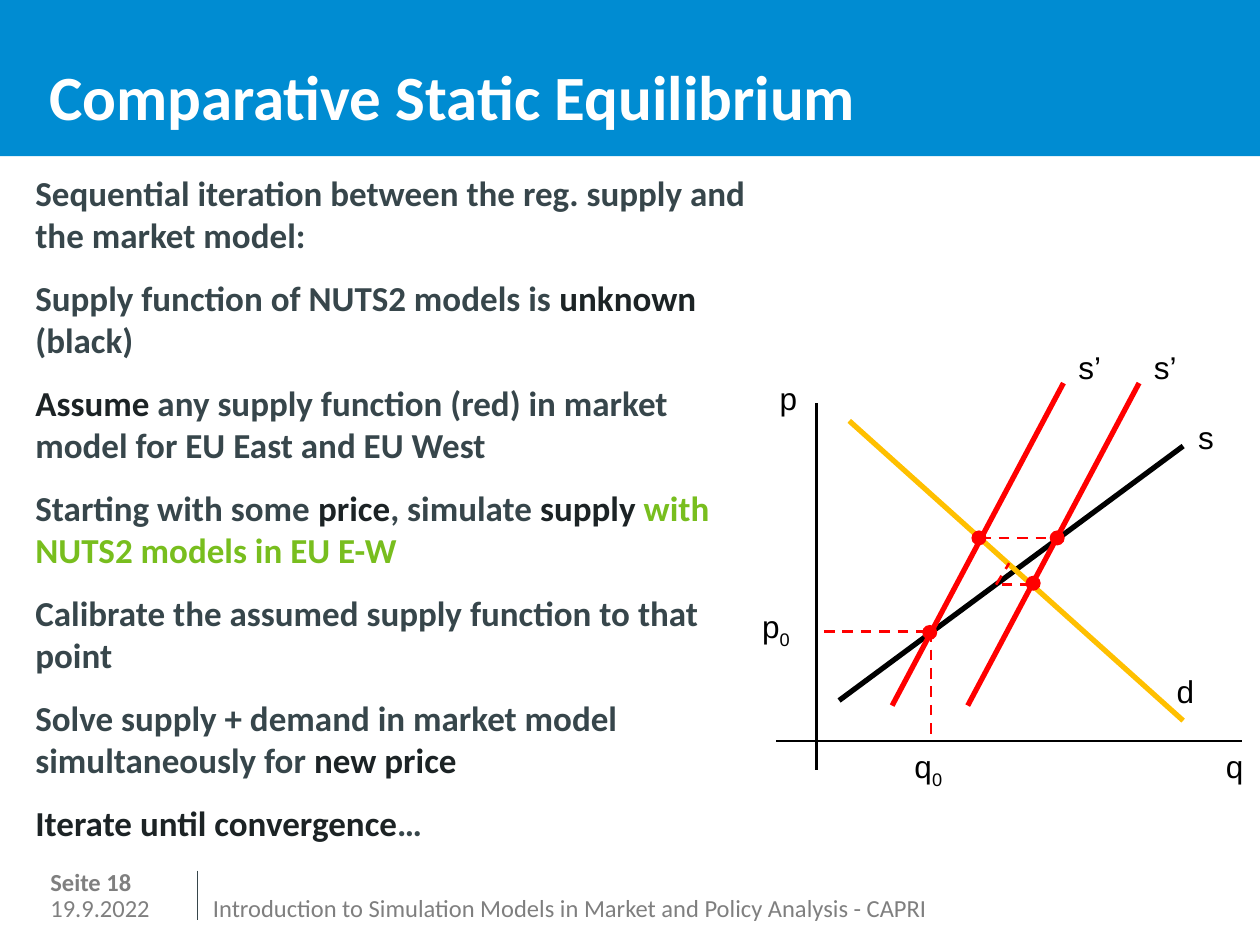
import itertools
from typing import NamedTuple

import pptx
import pptx.dml.color
import pptx.enum.dml
import pptx.enum.shapes
import pptx.enum.text
import pptx.oxml.ns
import pptx.util
from lxml import etree

Pt = pptx.util.Pt
COLORS = {
    "band": "008CD2", "white": "FFFFFF", "slate": "37464B", "dark": "1C2325",
    "green": "78BE1E", "gray": "7F7F7F", "black": "000000", "red": "FF0000",
    "yellow": "FFC000",
}


class Line(NamedTuple):
    start: tuple[float, float]
    end: tuple[float, float]
    color: str
    width: float
    dashed: bool = False


class Label(NamedTuple):
    text: str
    left: float
    top: float
    width: float
    subscript: str = ""


def rgb(name: str) -> pptx.dml.color.RGBColor:
    return pptx.dml.color.RGBColor.from_string(COLORS[name])


def style(font, face: str, size: float, color: str, bold: bool = False) -> None:
    font.name, font.size, font.bold = face, Pt(size), bold
    font.color.rgb = rgb(color)


def place(shape, left: float, top: float, width: float, height: float) -> None:
    shape.left, shape.top = Pt(left), Pt(top)
    shape.width, shape.height = Pt(width), Pt(height)


def clear_margins(frame) -> None:
    frame.margin_left = frame.margin_top = 0
    frame.margin_right = frame.margin_bottom = 0
    frame.word_wrap = True
    frame.auto_size = pptx.enum.text.MSO_AUTO_SIZE.NONE


def draw_line(page, line: Line) -> None:
    connector = page.shapes.add_connector(
        pptx.enum.shapes.MSO_CONNECTOR.STRAIGHT,
        *(Pt(value) for value in line.start + line.end))
    connector.line.color.rgb = rgb(line.color)
    connector.line.width = Pt(line.width)
    if line.dashed:
        connector.line.dash_style = pptx.enum.dml.MSO_LINE.DASH
    etree.SubElement(connector.element.spPr, pptx.oxml.ns.qn("a:effectLst"))


def draw_shape(page, kind, left: float, top: float, width: float,
               height: float, color: str):
    shape = page.shapes.add_shape(kind, Pt(left), Pt(top), Pt(width), Pt(height))
    shape.shadow.inherit = False
    shape.fill.solid()
    shape.fill.fore_color.rgb = rgb(color)
    shape.line.fill.background()
    return shape


def draw_label(page, label: Label) -> None:
    box = page.shapes.add_textbox(
        Pt(label.left), Pt(label.top), Pt(label.width), Pt(29.5))
    box.text_frame.word_wrap = False
    box.text_frame.auto_size = pptx.enum.text.MSO_AUTO_SIZE.SHAPE_TO_FIT_TEXT
    box.text_frame.text = label.text
    para = box.text_frame.paragraphs[0]
    if label.subscript:
        span = para.add_run()
        span.text = label.subscript
        span.font._element.set("baseline", "-25000")
    for span in para.runs:
        style(span.font, "Arial", 18, "black")


def draw_footer(page, text: str, left: float, top: float, width: float,
                bold: bool = False) -> None:
    box = page.shapes.add_textbox(Pt(left), Pt(top), Pt(width), Pt(20))
    clear_margins(box.text_frame)
    box.text_frame.text = text
    style(box.text_frame.paragraphs[0].runs[0].font, "Calibri", 14, "gray", bold)


def fill_body(body, paragraphs) -> None:
    clear_margins(body.text_frame)
    for number, spans in enumerate(paragraphs):
        para = (body.text_frame.add_paragraph() if number
                else body.text_frame.paragraphs[0])
        properties = para._p.get_or_add_pPr()
        properties.set("marL", "0")
        properties.set("indent", "0")
        etree.SubElement(properties, pptx.oxml.ns.qn("a:buNone"))
        para.space_before, para.space_after = Pt(0), Pt(12)
        for text, color in spans:
            span = para.add_run()
            span.text = text
            style(span.font, "Calibri", 20, color, True)


BODY = [
    [("Sequential iteration between the reg. supply and the market model:", "slate")],
    [("Supply function of NUTS2 models is ", "slate"), ("unknown", "dark"),
     (" (black)", "slate")],
    [("Assume", "dark"),
     (" any supply function (red) in market model for EU East and EU West", "slate")],
    [("Starting with some ", "slate"), ("price", "dark"), (", simulate ", "slate"),
     ("supply ", "dark"), ("with NUTS2 models in EU E-W", "green")],
    [("Calibrate the assumed supply function to that point", "slate")],
    [("Solve supply + demand in market model simultaneously for ", "slate"),
     ("new price", "dark")],
    [("Iterate until convergence", "dark"), ("…", "slate")],
]
AXES_AND_CURVES = [
    Line((470.9, 360.7), (534.2, 360.7), "red", 1.5, True),
    Line((466.6, 230.4), (466.6, 439.9), "black", 1.5),
    Line((443.5, 423.4), (709.9, 423.4), "black", 1.5),
    Line((479.5, 400.3), (676.1, 254.9), "black", 3),
    Line((485.3, 240.5), (676.1, 411.8), "yellow", 3),
    *(Line((left, 403.2), (left + 97.9, 218.9), "red", 3) for left in (553, 509.8)),
]
ITERATION = [(532.8, 360.7), (560.2, 307.4), (604.1, 307.4), (589, 334.1),
             (569.2, 334.1), (576.7, 321.8)]
LABELS = [
    Label("p", 428.4, 343.4, 31, "0"), Label("q", 515.5, 423.4, 31, "0"),
    Label("q", 693.4, 423.4, 24.5), Label("p", 438.5, 213.1, 24.5),
    Label("s", 677.5, 235.4, 23), Label("d", 665.3, 380.2, 24.5),
    Label("s’", 652.3, 195.1, 27.4), Label("s’", 609.1, 195.1, 27.4),
]
DOTS = [(555.1, 303.1), (527, 357.1), (599.8, 303.1), (586.1, 329)]


def main() -> None:
    deck = pptx.Presentation()
    deck.slide_width, deck.slide_height = Pt(720), Pt(540)
    page = deck.slides.add_slide(deck.slide_layouts[1])
    title, body = page.placeholders

    # Title on its band, with the band behind the placeholders
    band = draw_shape(page, pptx.enum.shapes.MSO_SHAPE.RECTANGLE,
                      0, -1.4, 720, 90.7, "band")
    title.element.addprevious(band.element)
    place(title, 28.1, 0, 663.1, 76.3)
    clear_margins(title.text_frame)
    title.text_frame.vertical_anchor = pptx.enum.text.MSO_ANCHOR.BOTTOM
    title.text_frame.text = "Comparative Static Equilibrium"
    para = title.text_frame.paragraphs[0]
    para.alignment = pptx.enum.text.PP_ALIGN.LEFT
    para.line_spacing = Pt(35)
    style(para.runs[0].font, "Calibri", 36, "white", True)

    # Steps of the iteration
    place(body, 20.2, 97.9, 415.4, 344.2)
    fill_body(body, BODY)

    # Footer
    draw_footer(page, "19.9.2022", 28.8, 510.5, 76.3)
    draw_footer(page, "Seite 18", 28.8, 495.4, 76.3, True)
    draw_line(page, Line((113, 497.5), (113, 525.6), "slate", 0.75))
    draw_footer(page, "Introduction to Simulation Models in Market and Policy "
                "Analysis - CAPRI", 121.7, 510.5, 477.4)

    # Supply and demand diagram
    for line in AXES_AND_CURVES:
        draw_line(page, line)
    for start, end in itertools.pairwise(ITERATION):
        draw_line(page, Line(start, end, "red", 1.5, True))
    draw_line(page, Line((532.1, 360.7), (532.1, 422.6), "red", 1.5, True))
    for label in LABELS:
        draw_label(page, label)
    for left, top in DOTS:
        draw_shape(page, pptx.enum.shapes.MSO_SHAPE.OVAL, left, top, 8.6, 8.6, "red")

    deck.save("out.pptx")


if __name__ == "__main__":
    main()
